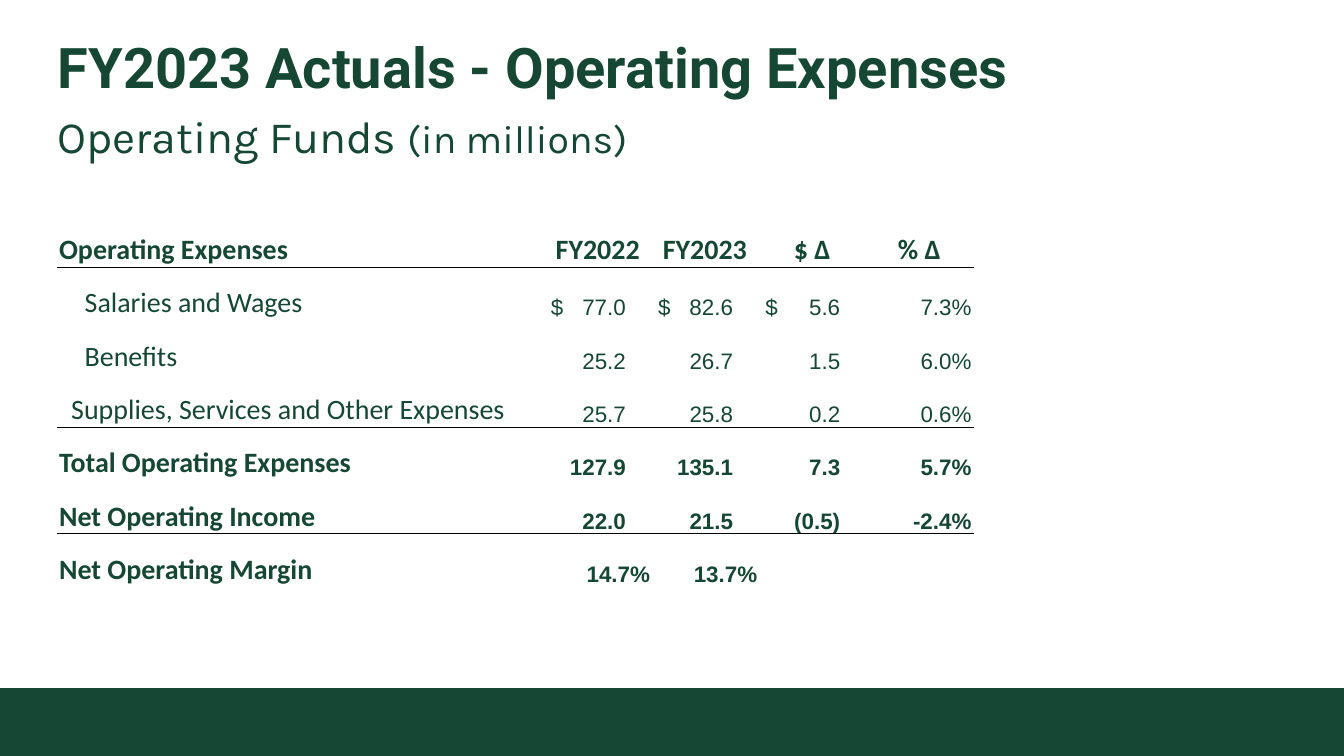
import pptx
import pptx.dml.color
import pptx.enum.shapes
import pptx.enum.text
import pptx.oxml
import pptx.oxml.ns
import pptx.util

Inches = pptx.util.Inches
Pt = pptx.util.Pt
ALIGN = pptx.enum.text.PP_ALIGN
NS = pptx.oxml.ns.nsdecls("a")
GREEN = "154734"
BLACK = "000000"


def rgb(value):
    return pptx.dml.color.RGBColor.from_string(value)


class SlideBuilder:
    inset = 0.01
    number_inset = 0.19
    dollar_inset = 0.05

    def __init__(self, slide):
        self.slide = slide

    def style(self, r, size, font, bold=False):
        r.font.size = Pt(size)
        r.font.name = font
        r.font.bold = bold
        r.font.color.rgb = rgb(GREEN)

    def band(self, left, top, width, height):
        sp = self.slide.shapes.add_shape(
            pptx.enum.shapes.MSO_SHAPE.RECTANGLE,
            Inches(left), Inches(top), Inches(width), Inches(height))
        sp.shadow.inherit = False
        sp.fill.solid()
        sp.fill.fore_color.rgb = rgb(GREEN)
        sp.line.fill.background()

    def text(self, left, top, width, height, parts, font, bold=False):
        sp = self.slide.shapes.add_textbox(
            Inches(left), Inches(top), Inches(width), Inches(height))
        tf = sp.text_frame
        tf.word_wrap = True
        tf.margin_left = tf.margin_right = tf.margin_top = tf.margin_bottom = 0
        p = tf.paragraphs[0]
        for words, size in parts:
            r = p.add_run()
            r.text = words
            self.style(r, size, font, bold)
        return p

    def rule(self, cell, side):
        line = pptx.oxml.parse_xml(
            f'<a:{side} {NS} w="{Pt(0.5)}"><a:solidFill>'
            f'<a:srgbClr val="{BLACK}"/></a:solidFill></a:{side}>')
        cell._tc.get_or_add_tcPr().insert(0, line)

    def cell(self, cell, words, size, font, bold, align, left, right):
        cell.fill.background()
        cell.vertical_anchor = pptx.enum.text.MSO_ANCHOR.BOTTOM
        cell.margin_left, cell.margin_right = Inches(left), Inches(right)
        cell.margin_top, cell.margin_bottom = Inches(self.inset), 0
        p = cell.text_frame.paragraphs[0]
        p.text = words
        p.alignment = align
        for r in p.runs:
            self.style(r, size, font, bold)
        return p

    def amount(self, cell, words, bold, width):
        if words.startswith("$"):
            p = self.cell(cell, words, 12, "Arial", bold, ALIGN.LEFT,
                          self.dollar_inset, self.inset)
            stop = Inches(width - self.dollar_inset - self.number_inset)
            p._p.get_or_add_pPr().append(pptx.oxml.parse_xml(
                f'<a:tabLst {NS}><a:tab pos="{stop}" algn="r"/></a:tabLst>'))
        else:
            right = self.inset if words.endswith("%") else self.number_inset
            self.cell(cell, words, 12, "Arial", bold, ALIGN.RIGHT, self.inset, right)

    def table(self, left, top, height, widths, header, rows, ruled):
        count = len(rows) + 1
        sp = self.slide.shapes.add_table(
            count, len(widths), Inches(left), Inches(top),
            Inches(sum(widths)), Inches(height))
        table = sp.table
        table.first_row = table.horz_banding = False
        for column, width in zip(table.columns, widths):
            column.width = Inches(width)
        for j, words in enumerate(header):
            align = ALIGN.CENTER if j else ALIGN.LEFT
            self.cell(table.cell(0, j), words, 15, "Calibri", True, align,
                      self.inset, self.inset)
        for i, (label, indent, bold, amounts) in enumerate(rows, 1):
            self.cell(table.cell(i, 0), label, 15, "Calibri", bold, ALIGN.LEFT,
                      self.inset + indent, self.inset)
            for j, words in enumerate(amounts, 1):
                self.amount(table.cell(i, j), words, bold, widths[j])
        for i in ruled:
            for j in range(len(widths)):
                self.rule(table.cell(i, j), "lnB")
                self.rule(table.cell(i + 1, j), "lnT")


def main():
    prs = pptx.Presentation()
    prs.slide_width = Inches(10)
    prs.slide_height = prs.slide_width * 9 // 16
    s = SlideBuilder(prs.slides.add_slide(prs.slide_layouts[6]))

    s.band(-0.04, 5.12, 10.04, 0.51)
    title = s.text(0.43, 0.3, 9.14, 0.44,
                   [("FY2023 Actuals - Operating Expenses", 30)], "Roboto", True)
    title.line_spacing = 0.9
    subtitle = s.text(0.43, 0.81, 9.14, 0.34,
                      [("Operating Funds ", 24), ("(in millions)", 21)], "Karla")
    subtitle.space_before = subtitle.space_after = Pt(3)

    header = ["Operating Expenses", "FY2022", "FY2023", "$ ∆", "% ∆"]
    rows = [
        ("Salaries and Wages", 0.19, False, ["$\t77.0", "$\t82.6", "$\t5.6", "7.3%"]),
        ("Benefits", 0.19, False, ["25.2", "26.7", "1.5", "6.0%"]),
        ("Supplies, Services and Other Expenses", 0.09, False,
         ["25.7", "25.8", "0.2", "0.6%"]),
        ("Total Operating Expenses", 0, True, ["127.9", "135.1", "7.3", "5.7%"]),
        ("Net Operating Income", 0, True, ["22.0", "21.5", "(0.5)", "-2.4%"]),
        ("Net Operating Margin", 0, True, ["14.7%", "13.7%", "", ""]),
    ]
    label_width, table_width = 3.62, 6.81
    widths = [label_width] + [(table_width - label_width) / 4] * 4
    s.table(0.43, 1.59, 2.78, widths, header, rows, ruled=[0, 3, 5])
    prs.save("out.pptx")


if __name__ == "__main__":
    main()
